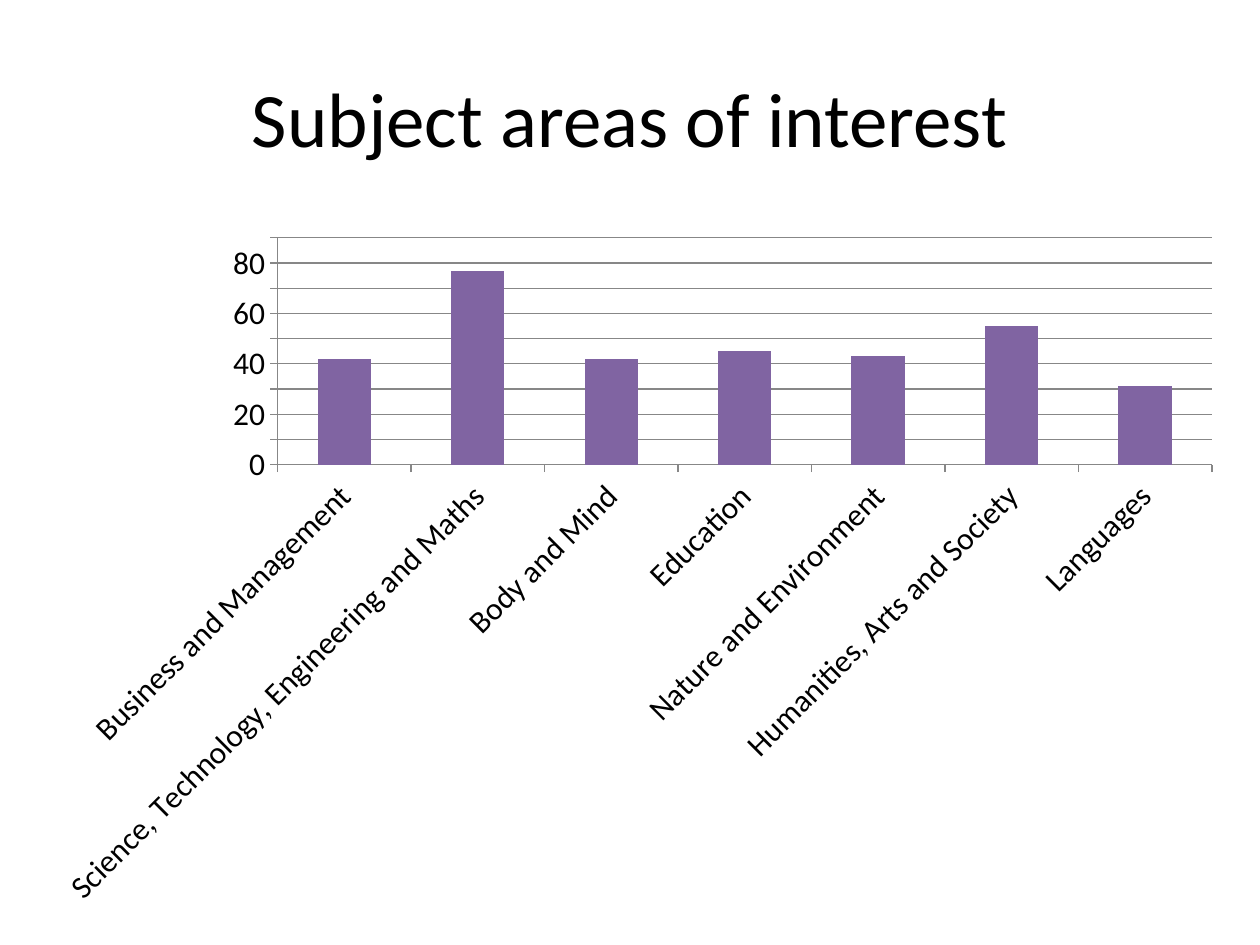
from pptx import Presentation
from pptx.chart.data import CategoryChartData
from pptx.dml.color import RGBColor
from pptx.enum.chart import XL_CHART_TYPE as ChartType, XL_TICK_MARK as TickMark
from pptx.enum.text import MSO_ANCHOR as Anchor, PP_ALIGN as Align
from pptx.util import Emu, Pt

PX = 914400 // 126
FONT = "Calibri"
COLORS = {"text": "000000", "bar": "8064A2", "line": "878787"}
INTEREST = {
    "Business and Management": 42,
    "Science, Technology, Engineering and Maths": 77,
    "Body and Mind": 42,
    "Education": 45,
    "Nature and Environment": 43,
    "Humanities, Arts and Society": 55,
    "Languages": 31,
}


def px(length):
    return Emu(length * PX)


def color(name):
    return RGBColor.from_string(COLORS[name])


def style_font(font, size):
    font.name = FONT
    font.size = Pt(size)
    font.color.rgb = color("text")


def style_line(line):
    line.color.rgb = color("line")
    line.width = Pt(0.75)


def add_title(slide, text, left, top, width, height):
    title = slide.shapes.title
    title.left, title.top = px(left), px(top)
    title.width, title.height = px(width), px(height)
    frame = title.text_frame
    frame.text = text
    frame.vertical_anchor = Anchor.MIDDLE
    paragraph = frame.paragraphs[0]
    paragraph.alignment = Align.CENTER
    style_font(paragraph.font, 44)


def style_axis(axis):
    axis.major_tick_mark = TickMark.OUTSIDE
    axis.minor_tick_mark = TickMark.NONE
    style_line(axis.format.line)
    style_font(axis.tick_labels.font, 18)


def add_column_chart(slide, values, left, top, width, height):
    data = CategoryChartData(number_format="0")
    data.categories = list(values)
    data.add_series("Series 1", list(values.values()))
    chart = slide.shapes.add_chart(
        ChartType.COLUMN_STACKED, px(left), px(top), px(width), px(height), data
    ).chart
    chart.has_legend = False
    chart.has_title = False
    style_font(chart.font, 18)

    style_axis(chart.category_axis)
    label_body = chart.category_axis._element.txPr.bodyPr
    label_body.set("rot", "-2700000")
    label_body.set("vert", "horz")

    value_axis = chart.value_axis
    style_axis(value_axis)
    value_axis.minimum_scale = 0
    value_axis.maximum_scale = 90
    value_axis.major_unit = 10
    value_axis.has_major_gridlines = True
    style_line(value_axis.major_gridlines.format.line)

    plot = chart.plots[0]
    plot.vary_by_categories = False
    plot.gap_width = 150
    plot.overlap = 100
    fill = plot.series[0].format.fill
    fill.solid()
    fill.fore_color.rgb = color("bar")


def main():
    presentation = Presentation()
    presentation.slide_width = px(1260)
    presentation.slide_height = px(945)
    slide = presentation.slides.add_slide(presentation.slide_layouts[5])
    add_title(slide, "Subject areas of interest", 63, 38, 1134, 158)
    add_column_chart(slide, INTEREST, 35, 224, 1201, 696)
    presentation.save("out.pptx")


if __name__ == "__main__":
    main()
